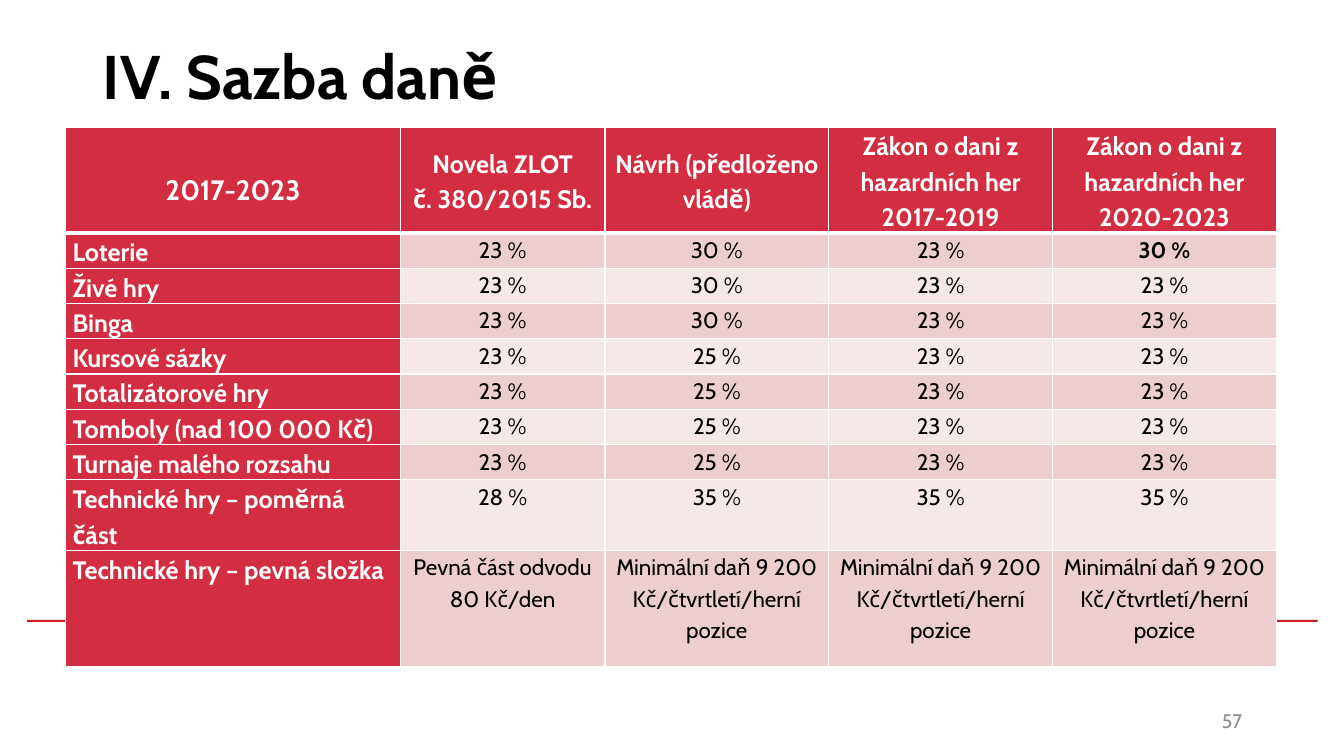
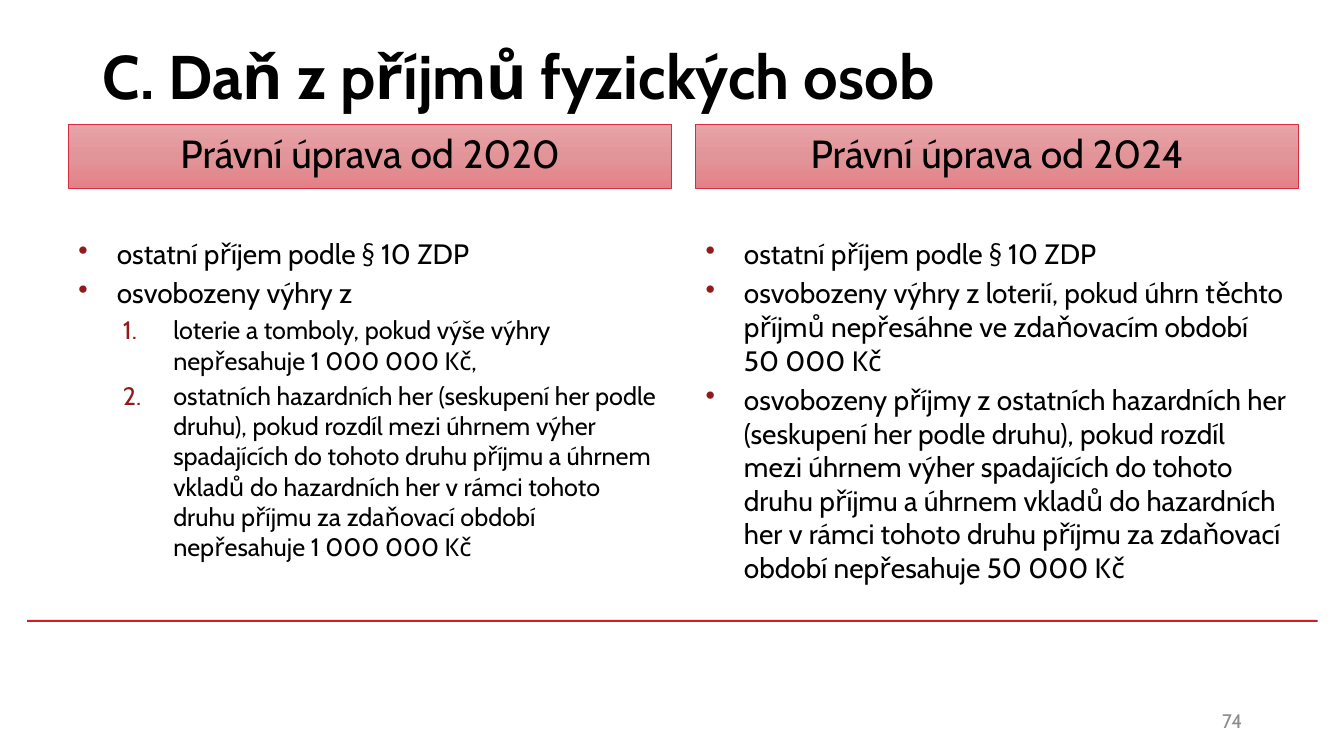
import copy
from dataclasses import dataclass

import pptx
import pptx.dml.color
import pptx.enum.shapes
import pptx.enum.text
import pptx.oxml
import pptx.oxml.ns
import pptx.util
from pptx.util import Inches

FONT = "Cabin"
BLACK, WHITE, GREY = "000000", "FFFFFF", "8C8C8C"
RED, RULE_RED, BULLET_RED = "D22D40", "CD1F21", "92191C"
ROW_TINTS = ("EECDCF", "F7E8E8")
BANNER_GRADIENT = ((0, "E7A3A7"), (0.5, "E29599"), (1, "E38186"))

ALIGN = pptx.enum.text.PP_ALIGN
ANCHOR = pptx.enum.text.MSO_ANCHOR
RECTANGLE = pptx.enum.shapes.MSO_SHAPE.RECTANGLE


@dataclass(frozen=True)
class TextStyle:
    size: float
    color: str = BLACK
    bold: bool = False
    align: ALIGN = ALIGN.LEFT


@dataclass(frozen=True)
class Item:
    text: str
    numbered: bool = False


@dataclass(frozen=True)
class Regime:
    heading: str
    items: tuple[Item, ...]


TITLE = TextStyle(44, bold=True)
PAGE_NUMBER = TextStyle(14, GREY, align=ALIGN.RIGHT)
PERIOD = TextStyle(20, WHITE, True, ALIGN.CENTER)
COLUMN_HEAD = TextStyle(18, WHITE, True, ALIGN.CENTER)
GAME = TextStyle(18, WHITE, True)
RATE = TextStyle(16, align=ALIGN.CENTER)
RAISED_RATE = TextStyle(16, bold=True, align=ALIGN.CENTER)
BANNER = TextStyle(28, align=ALIGN.CENTER)

# Content: tax rates
MINIMUM_TAX = "Minimální daň 9 200 Kč/čtvrtletí/herní pozice"
RATE_ROWS = (
    ("2017-2023", "Novela ZLOT\nč. 380/2015 Sb.", "Návrh (předloženo vládě)",
     "Zákon o dani z hazardních her 2017-2019", "Zákon o dani z hazardních her 2020-2023"),
    ("Loterie", "23 %", "30 %", "23 %", "30 %"),
    ("Živé hry", "23 %", "30 %", "23 %", "23 %"),
    ("Binga", "23 %", "30 %", "23 %", "23 %"),
    ("Kursové sázky", "23 %", "25 %", "23 %", "23 %"),
    ("Totalizátorové hry", "23 %", "25 %", "23 %", "23 %"),
    ("Tomboly (nad 100 000 Kč)", "23 %", "25 %", "23 %", "23 %"),
    ("Turnaje malého rozsahu", "23 %", "25 %", "23 %", "23 %"),
    ("Technické hry – poměrná část", "28 %", "35 %", "35 %", "35 %"),
    ("Technické hry – pevná složka", "Pevná část odvodu\n80 Kč/den", *[MINIMUM_TAX] * 3),
)
COLUMN_WIDTHS = (3.32, 2.03, 2.22, 2.22, 2.22)
ROW_HEIGHTS = (1.05, *[0.35] * 7, 0.7, 1.15)
RAISED_CELL = (1, 4)

# Content: income tax before and after
REGIMES = (
    Regime("Právní úprava od 2020", (
        Item("ostatní příjem podle § 10 ZDP"),
        Item("osvobozeny výhry z"),
        Item("loterie a tomboly, pokud výše výhry nepřesahuje 1 000 000 Kč,", True),
        Item("ostatních hazardních her (seskupení her podle druhu), pokud rozdíl mezi úhrnem "
             "výher spadajících do tohoto druhu příjmu a úhrnem vkladů do hazardních her "
             "v rámci tohoto druhu příjmu za zdaňovací období nepřesahuje 1 000 000 Kč", True),
    )),
    Regime("Právní úprava od 2024", (
        Item("ostatní příjem podle § 10 ZDP"),
        Item("osvobozeny výhry z loterií, pokud úhrn těchto příjmů nepřesáhne "
             "ve zdaňovacím období 50 000 Kč"),
        Item("osvobozeny příjmy z ostatních hazardních her (seskupení her podle druhu), pokud "
             "rozdíl mezi úhrnem výher spadajících do tohoto druhu příjmu a úhrnem vkladů do "
             "hazardních her v rámci tohoto druhu příjmu za zdaňovací období nepřesahuje "
             "50 000 Kč"),
    )),
)


# Shared helpers
def rgb(value: str) -> pptx.dml.color.RGBColor:
    return pptx.dml.color.RGBColor.from_string(value)


def style_paragraph(paragraph, style: TextStyle) -> None:
    paragraph.alignment = style.align
    for run in paragraph.runs:
        run.font.name = FONT
        run.font.size = pptx.util.Pt(style.size)
        run.font.bold = style.bold
        run.font.color.rgb = rgb(style.color)


def write(frame, text: str, style: TextStyle, anchor: ANCHOR) -> None:
    frame.word_wrap = True
    frame.vertical_anchor = anchor
    frame.text = text
    for paragraph in frame.paragraphs:
        style_paragraph(paragraph, style)


def add_text(slide, left: float, top: float, width: float, height: float,
             text: str, style: TextStyle) -> None:
    box = slide.shapes.add_textbox(Inches(left), Inches(top), Inches(width), Inches(height))
    write(box.text_frame, text, style, ANCHOR.MIDDLE)


def add_rectangle(slide, left: float, top: float, width: float, height: float):
    shape = slide.shapes.add_shape(
        RECTANGLE, Inches(left), Inches(top), Inches(width), Inches(height))
    shape.shadow.inherit = False
    return shape


def add_base_slide(deck, title: str, number: str):
    slide = deck.slides.add_slide(deck.slide_layouts[6])
    rule = add_rectangle(slide, 0.27, 6.15, 12.8, 0.02)
    rule.fill.solid()
    rule.fill.fore_color.rgb = rgb(RULE_RED)
    rule.line.fill.background()
    add_text(slide, 0.92, 0.02, 11.5, 1.45, title, TITLE)
    add_text(slide, 9.42, 6.95, 3, 0.4, number, PAGE_NUMBER)
    return slide


# Rate table
def set_borders(cell, widths: dict[str, float]) -> None:
    properties = cell._tc.get_or_add_tcPr()
    for side in ("L", "R", "T", "B"):
        properties.append(pptx.oxml.parse_xml(
            f'<a:ln{side} {pptx.oxml.ns.nsdecls("a")} w="{pptx.util.Pt(widths.get(side, 1))}">'
            f'<a:solidFill><a:srgbClr val="{WHITE}"/></a:solidFill></a:ln{side}>'))


def cell_style(row: int, column: int) -> TextStyle:
    if row == 0:
        return COLUMN_HEAD if column else PERIOD
    if column == 0:
        return GAME
    return RAISED_RATE if (row, column) == RAISED_CELL else RATE


def add_rate_table(slide) -> None:
    table = slide.shapes.add_table(
        len(RATE_ROWS), len(COLUMN_WIDTHS), Inches(0.65), Inches(1.26),
        Inches(sum(COLUMN_WIDTHS)), Inches(sum(ROW_HEIGHTS))).table
    for column, width in zip(table.columns, COLUMN_WIDTHS):
        column.width = Inches(width)
    for row, height in zip(table.rows, ROW_HEIGHTS):
        row.height = Inches(height)
    for r, texts in enumerate(RATE_ROWS):
        for c, text in enumerate(texts):
            cell = table.cell(r, c)
            cell.margin_left = cell.margin_right = Inches(0.07)
            cell.margin_top = Inches(0.15 if r == c == 0 else 0)
            cell.margin_bottom = 0
            cell.vertical_anchor = ANCHOR.TOP if r else ANCHOR.MIDDLE
            cell.text_frame.text = text
            for paragraph in cell.text_frame.paragraphs:
                paragraph.line_spacing = 1.15
                style_paragraph(paragraph, cell_style(r, c))
            set_borders(cell, {0: {"B": 3}, 1: {"T": 3}}.get(r, {}))
            cell.fill.solid()
            is_heading = r == 0 or c == 0
            cell.fill.fore_color.rgb = rgb(RED if is_heading else ROW_TINTS[(r - 1) % 2])


# Regime columns
def add_banner(slide, left: float, width: float, heading: str) -> None:
    banner = add_rectangle(slide, left, 1.23, width, 0.64)
    banner.fill.gradient()
    banner.fill.gradient_angle = 270
    stop_list = banner._element.spPr.find(".//" + pptx.oxml.ns.qn("a:gsLst"))
    stop_list.insert(1, copy.deepcopy(stop_list[0]))
    for stop, (position, color) in zip(banner.fill.gradient_stops, BANNER_GRADIENT):
        stop.position = position
        stop.color.rgb = rgb(color)
    banner.line.color.rgb = rgb(RED)
    banner.line.width = pptx.util.Pt(0.5)
    write(banner.text_frame, heading, BANNER, ANCHOR.TOP)


def set_bullet(paragraph, numbered: bool) -> None:
    indent, hanging = (0.94, 0.5) if numbered else (0.38, 0.38)
    marker = 'buAutoNum type="arabicPeriod"' if numbered else 'buChar char="•"'
    properties = paragraph._p.get_or_add_pPr()
    properties.set("marL", str(Inches(indent)))
    properties.set("indent", str(-Inches(hanging)))
    namespace = pptx.oxml.ns.nsdecls("a")
    properties.append(pptx.oxml.parse_xml(
        f'<a:buClr {namespace}><a:srgbClr val="{BULLET_RED}"/></a:buClr>'))
    properties.append(pptx.oxml.parse_xml(f"<a:{marker} {namespace}/>"))


def add_items(slide, left: float, width: float, items: tuple[Item, ...]) -> None:
    frame = slide.shapes.add_textbox(
        Inches(left), Inches(2.3), Inches(width), Inches(3.96)).text_frame
    frame.word_wrap = True
    for index, item in enumerate(items):
        paragraph = frame.add_paragraph() if index else frame.paragraphs[0]
        paragraph.text = item.text
        paragraph.level = int(item.numbered)
        set_bullet(paragraph, item.numbered)
        size = 18 if item.numbered else 20
        if index:
            paragraph.space_before = pptx.util.Pt(size * 0.2)
        style_paragraph(paragraph, TextStyle(size))


def add_regimes(slide) -> None:
    width, gap = 5.98, 0.24
    for index, regime in enumerate(REGIMES):
        left = 0.68 + index * (width + gap)
        add_banner(slide, left, width, regime.heading)
        add_items(slide, left, width, regime.items)


def main() -> None:
    deck = pptx.Presentation()
    deck.slide_width, deck.slide_height = Inches(13.33), Inches(7.5)
    add_rate_table(add_base_slide(deck, "IV. Sazba daně", "57"))
    add_regimes(add_base_slide(deck, "C. Daň z příjmů fyzických osob", "74"))
    deck.save("out.pptx")


if __name__ == "__main__":
    main()
